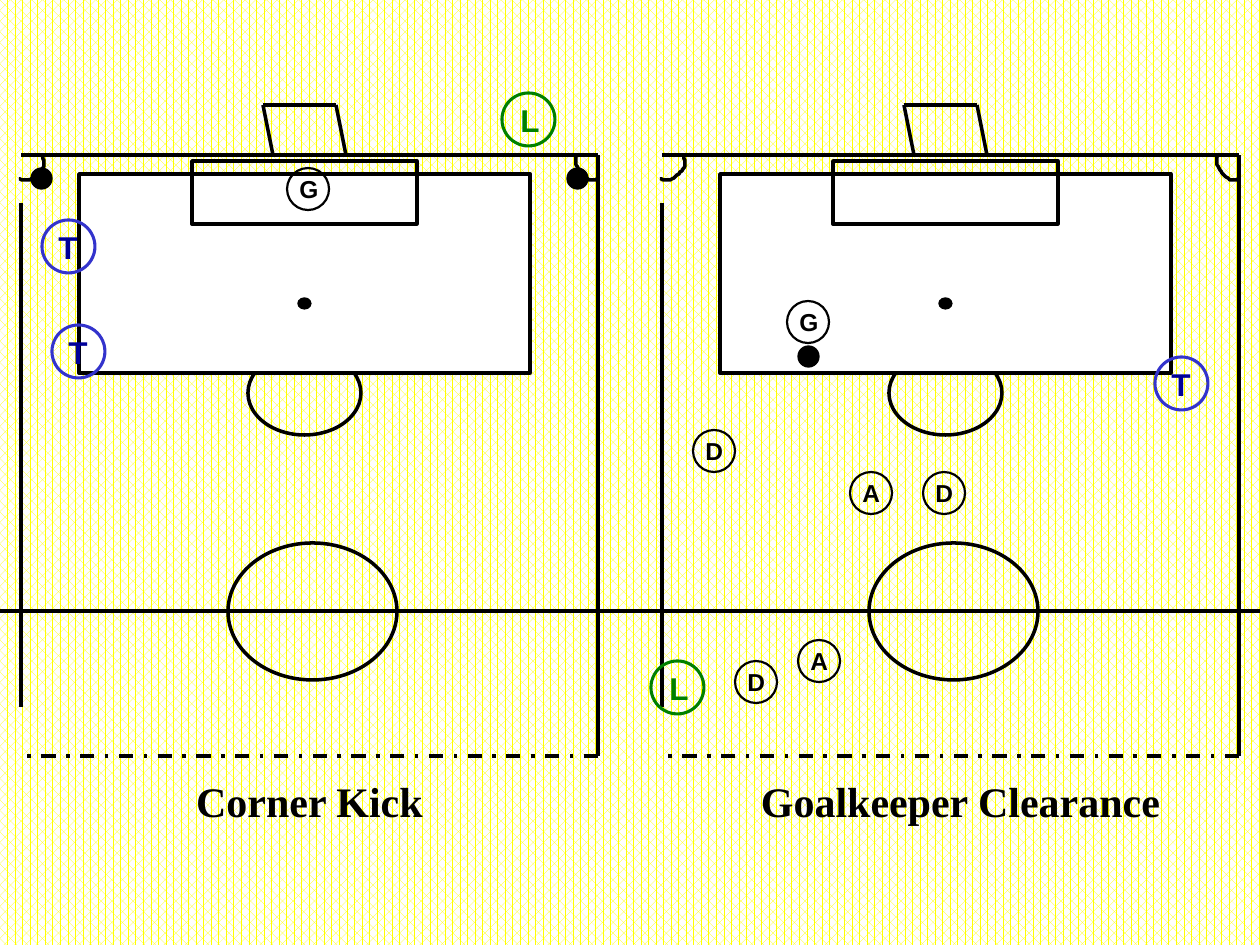
from lxml.etree import SubElement
from pptx import Presentation
from pptx.dml.color import RGBColor
from pptx.enum.dml import MSO_LINE, MSO_PATTERN
from pptx.enum.shapes import MSO_CONNECTOR, MSO_SHAPE
from pptx.enum.text import MSO_AUTO_SIZE, PP_ALIGN
from pptx.oxml.ns import qn
from pptx.util import Pt

PX = 914400 / 126
SLIDE_W, SLIDE_H = 1260, 945
COLORS = {"black": "000000", "white": "FFFFFF", "yellow": "FFFF00",
          "green": "008000", "blue": "3333CC", "navy": "000099"}

# Player role -> circle size, outline, outline width, letter colour,
# letter size, letter box offset and size
ROLES = {
    "L": (53, "green", 1.75, "green", 18, (6, 2, 44, 50)),
    "T": (53, "blue", 1.75, "navy", 18, (4, 2, 44, 50)),
}
FIELD_PLAYER = (42, "black", 1.25, "black", 14, (0, 0, 44, 42))

# Corner arcs as a start point and cubic curves, relative to the pitch corner
CORNER_ARCS = [
    [(-2, 24), (2, 25), (6, 26), (10, 24), (14, 22), (20, 16), (22, 13),
     (25, 9), (22, 4), (22, 1)],
    [(556, 0), (554, 4), (554, 9), (557, 13), (559, 17), (564, 23), (567, 24),
     (571, 26), (575, 24), (578, 24)],
]


def emu(px):
    return round(px * PX)


def color(name):
    return RGBColor.from_string(COLORS[name])


def add_line(slide, start, end, dash=None):
    line = slide.shapes.add_connector(
        MSO_CONNECTOR.STRAIGHT, *map(emu, (*start, *end)))
    line.line.color.rgb = color("black")
    line.line.width = Pt(2)
    if dash:
        line.line.dash_style = dash
    SubElement(line._element.spPr, qn("a:effectLst"))


def style(shape, fill=None, outline="black", width=2):
    shape.shadow.inherit = False
    if fill:
        shape.fill.solid()
        shape.fill.fore_color.rgb = color(fill)
    else:
        shape.fill.background()
    shape.line.color.rgb = color(outline)
    shape.line.width = Pt(width)


def add_outline(slide, preset, box, **look):
    style(slide.shapes.add_shape(preset, *map(emu, box)), **look)


def add_label(slide, box, text, font, size, ink, align=None):
    label = slide.shapes.add_textbox(*map(emu, box))
    frame = label.text_frame
    frame.word_wrap = False
    frame.auto_size = MSO_AUTO_SIZE.SHAPE_TO_FIT_TEXT
    paragraph = frame.paragraphs[0]
    paragraph.text = text
    paragraph.alignment = align
    paragraph.font.name = font
    paragraph.font.size = Pt(size)
    paragraph.font.bold = True
    paragraph.font.color.rgb = color(ink)


def curve_points(controls, steps=8):
    """Points along joined cubic curves."""
    points = [controls[0]]
    for i in range(0, len(controls) - 1, 3):
        for step in range(1, steps + 1):
            t = step / steps
            weights = ((1 - t) ** 3, 3 * t * (1 - t) ** 2,
                       3 * t ** 2 * (1 - t), t ** 3)
            points.append(tuple(
                sum(w * p[axis] for w, p in zip(weights, controls[i:i + 4]))
                for axis in (0, 1)))
    return points


def add_pitch(slide, left, top, width=577, height=601):
    def at(x, y):
        return left + x, top + y

    # Boundary and halfway line
    add_line(slide, at(0, 0), at(width, 0))
    add_line(slide, at(0, 552), at(0, 48))
    add_line(slide, at(width, 0), at(width, height))
    halfway = top + 456
    add_line(slide, (max(0, left - 55), halfway),
             (min(SLIDE_W, left + 632), halfway))
    add_line(slide, at(width, height), at(0, height), MSO_LINE.DASH_DOT)

    # Goal
    add_line(slide, at(315, -50), at(325, 0))
    add_line(slide, at(242, -50), at(252, 0))
    add_line(slide, at(242, -50), at(315, -50))

    # Centre circle, penalty arc, penalty area, goal area, penalty spot
    add_outline(slide, MSO_SHAPE.OVAL, (*at(207, 388), 169, 137))
    add_outline(slide, MSO_SHAPE.OVAL, (*at(227, 196), 113, 84))
    add_outline(slide, MSO_SHAPE.RECTANGLE, (*at(58, 19), 451, 199), fill="white")
    add_outline(slide, MSO_SHAPE.RECTANGLE, (*at(171, 6), 225, 63))
    add_outline(slide, MSO_SHAPE.OVAL, (*at(277, 143), 13, 11),
                fill="black", width=0.75)

    # Corner arcs
    for controls in CORNER_ARCS:
        start, *rest = [at(*point) for point in curve_points(controls)]
        builder = slide.shapes.build_freeform(*start, scale=PX)
        builder.add_line_segments(rest, close=False)
        style(builder.convert_to_shape())


def add_ball(slide, left, top):
    add_outline(slide, MSO_SHAPE.OVAL, (left, top, 21, 21),
                fill="black", width=0.75)


def add_player(slide, role, left, top):
    size, outline, width, ink, points, letter = ROLES.get(role, FIELD_PLAYER)
    dx, dy, letter_w, letter_h = letter
    add_outline(slide, MSO_SHAPE.OVAL, (left, top, size, size),
                outline=outline, width=width)
    add_label(slide, (left + dx, top + dy, letter_w, letter_h),
              role, "Arial", points, ink)


def add_play(slide, left, top, caption, caption_box, balls, players):
    """One pitch with its balls, players and caption, relative to its corner."""
    add_pitch(slide, left, top)
    for x, y in balls:
        add_ball(slide, left + x, top + y)
    for role, x, y in players:
        add_player(slide, role, left + x, top + y)
    x, y, width, height = caption_box
    add_label(slide, (left + x, top + y, width, height), caption,
              "Times New Roman", 24, "black", PP_ALIGN.CENTER)


def main():
    prs = Presentation()
    prs.slide_width, prs.slide_height = emu(SLIDE_W), emu(SLIDE_H)
    slide = prs.slides.add_slide(prs.slide_layouts[6])

    # Patterned background
    backdrop = slide.background.fill
    backdrop.patterned()
    backdrop.pattern = MSO_PATTERN.PERCENT_60
    backdrop.fore_color.rgb = color("yellow")
    backdrop.back_color.rgb = color("white")

    add_play(slide, 21, 155, "Corner Kick", (162, 614, 253, 63),
             balls=[(546, 13), (10, 13)],
             players=[("G", 266, 13), ("L", 481, -62),
                      ("T", 31, 170), ("T", 21, 65)])
    add_play(slide, 662, 155, "Goalkeeper Clearance", (86, 614, 425, 63),
             balls=[(136, 191)],
             players=[("L", -11, 506), ("G", 125, 146), ("D", 73, 506),
                      ("A", 136, 485), ("D", 31, 275), ("A", 188, 317),
                      ("D", 261, 317), ("T", 493, 202)])

    prs.save("out.pptx")


if __name__ == "__main__":
    main()
